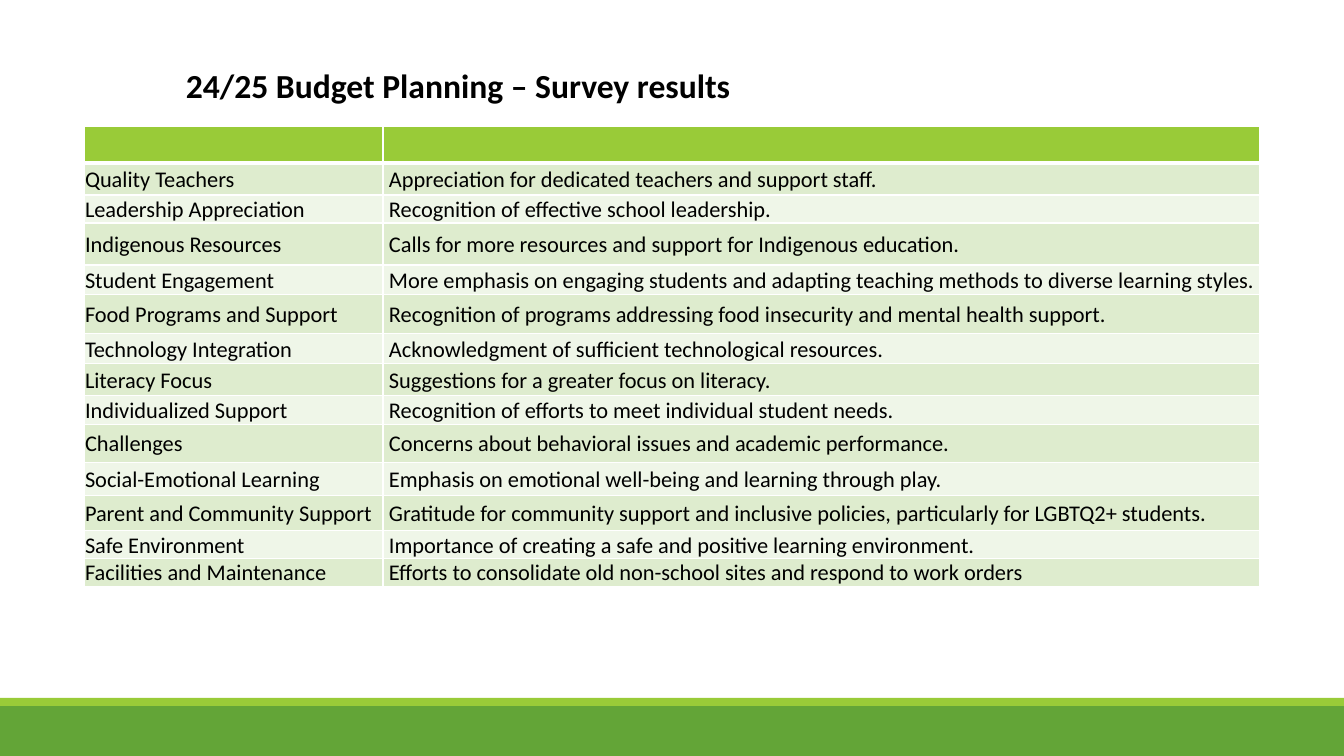
from lxml import etree
from pptx import Presentation
from pptx import util as u
from pptx.dml.color import RGBColor
from pptx.enum import shapes, text
from pptx.oxml import ns

PX = 9071.43  # EMU per px, at 100.8 px to the inch
FONT = "Calibri"
COLORS = {
    "footer": "63A537",
    "accent": "99CB38",
    "band_dark": "DEECCE",
    "band_light": "EFF6E8",
    "rule": "FFFFFF",
    "text": "000000",
}
COLUMN_WIDTHS = [299, 877]
HEADER_HEIGHT = 37
# Topic, finding, row height in px
SURVEY_ROWS = [
    ("Quality Teachers", "Appreciation for dedicated teachers and support staff.", 32),
    ("Leadership Appreciation", "Recognition of effective school leadership.", 28),
    ("Indigenous Resources",
     "Calls for more resources and support for Indigenous education.", 42),
    ("Student Engagement",
     "More emphasis on engaging students and adapting teaching methods "
     "to diverse learning styles.", 30),
    ("Food Programs and Support",
     "Recognition of programs addressing food insecurity and mental health support.", 39),
    ("Technology Integration", "Acknowledgment of sufficient technological resources.", 30),
    ("Literacy Focus", "Suggestions for a greater focus on literacy.", 32),
    ("Individualized Support", "Recognition of efforts to meet individual student needs.", 29),
    ("Challenges", "Concerns about behavioral issues and academic performance.", 38),
    ("Social-Emotional Learning",
     "Emphasis on emotional well-being and learning through play.", 33),
    ("Parent and Community Support",
     "Gratitude for community support and inclusive policies, "
     "particularly for LGBTQ2+ students.", 35),
    ("Safe Environment",
     "Importance of creating a safe and positive learning environment.", 28),
    ("Facilities and Maintenance",
     "Efforts to consolidate old non-school sites and respond to work orders", 28),
]


def px(length):
    return u.Emu(round(length * PX))


def rgb(name):
    return RGBColor.from_string(COLORS[name])


def style_font(para, size, bold=False):
    para.font.name = FONT
    para.font.size = u.Pt(size)
    para.font.bold = bold
    para.font.color.rgb = rgb("text")


def add_bar(page, top, height, color):
    bar = page.shapes.add_shape(
        shapes.MSO_SHAPE.RECTANGLE, 0, px(top), px(1344), px(height))
    bar.shadow.inherit = False
    bar.fill.solid()
    bar.fill.fore_color.rgb = rgb(color)
    bar.line.fill.background()


def add_title(page, wording):
    box = page.shapes.add_textbox(px(176), px(60), px(667), px(50))
    box.text_frame.word_wrap = True
    para = box.text_frame.paragraphs[0]
    para.text = wording
    style_font(para, 24, bold=True)


def add_borders(cell, bottom_width):
    properties = cell._tc.get_or_add_tcPr()
    for side, width in (("L", 1), ("R", 1), ("T", 1), ("B", bottom_width)):
        line = etree.SubElement(properties, ns.qn(f"a:ln{side}"), w=str(u.Pt(width)))
        fill = etree.SubElement(line, ns.qn("a:solidFill"))
        etree.SubElement(fill, ns.qn("a:srgbClr"), val=COLORS["rule"])


def fill_cell(cell, color, wording="", left=1, bottom_width=1,
              anchor=text.MSO_ANCHOR.MIDDLE):
    add_borders(cell, bottom_width)
    cell.fill.solid()
    cell.fill.fore_color.rgb = rgb(color)
    cell.vertical_anchor = anchor
    cell.margin_left = px(left)
    cell.margin_right = cell.margin_top = px(1)
    cell.margin_bottom = 0
    para = cell.text_frame.paragraphs[0]
    if wording:
        para.text = wording
    para.space_before = u.Pt(1)
    style_font(para, 16)


def add_survey_table(page):
    heights = [HEADER_HEIGHT] + [height for _, _, height in SURVEY_ROWS]
    table = page.shapes.add_table(
        len(heights), len(COLUMN_WIDTHS), px(84), px(126),
        px(sum(COLUMN_WIDTHS)), px(sum(heights))).table
    for column, width in zip(table.columns, COLUMN_WIDTHS):
        column.width = px(width)
    for row, height in zip(table.rows, heights):
        row.height = px(height)

    # Empty header with a heavier rule below
    for cell in table.rows[0].cells:
        fill_cell(cell, "accent", bottom_width=3)

    # Banded survey findings
    for number, (topic, finding, _) in enumerate(SURVEY_ROWS, start=1):
        color = "band_dark" if number % 2 else "band_light"
        last = number == len(SURVEY_ROWS)
        anchor = text.MSO_ANCHOR.BOTTOM if last else text.MSO_ANCHOR.MIDDLE
        fill_cell(table.cell(number, 0), color, topic, anchor=anchor)
        fill_cell(table.cell(number, 1), color, finding, left=6, anchor=anchor)


def main():
    deck = Presentation()
    deck.slide_width, deck.slide_height = px(1344), px(756)
    page = deck.slides.add_slide(deck.slide_layouts[6])

    # Footer bars
    add_bar(page, 706, 50, "footer")
    add_bar(page, 698, 8, "accent")

    # Title and table
    add_title(page, "24/25 Budget Planning – Survey results")
    add_survey_table(page)

    deck.save("out.pptx")


if __name__ == "__main__":
    main()
